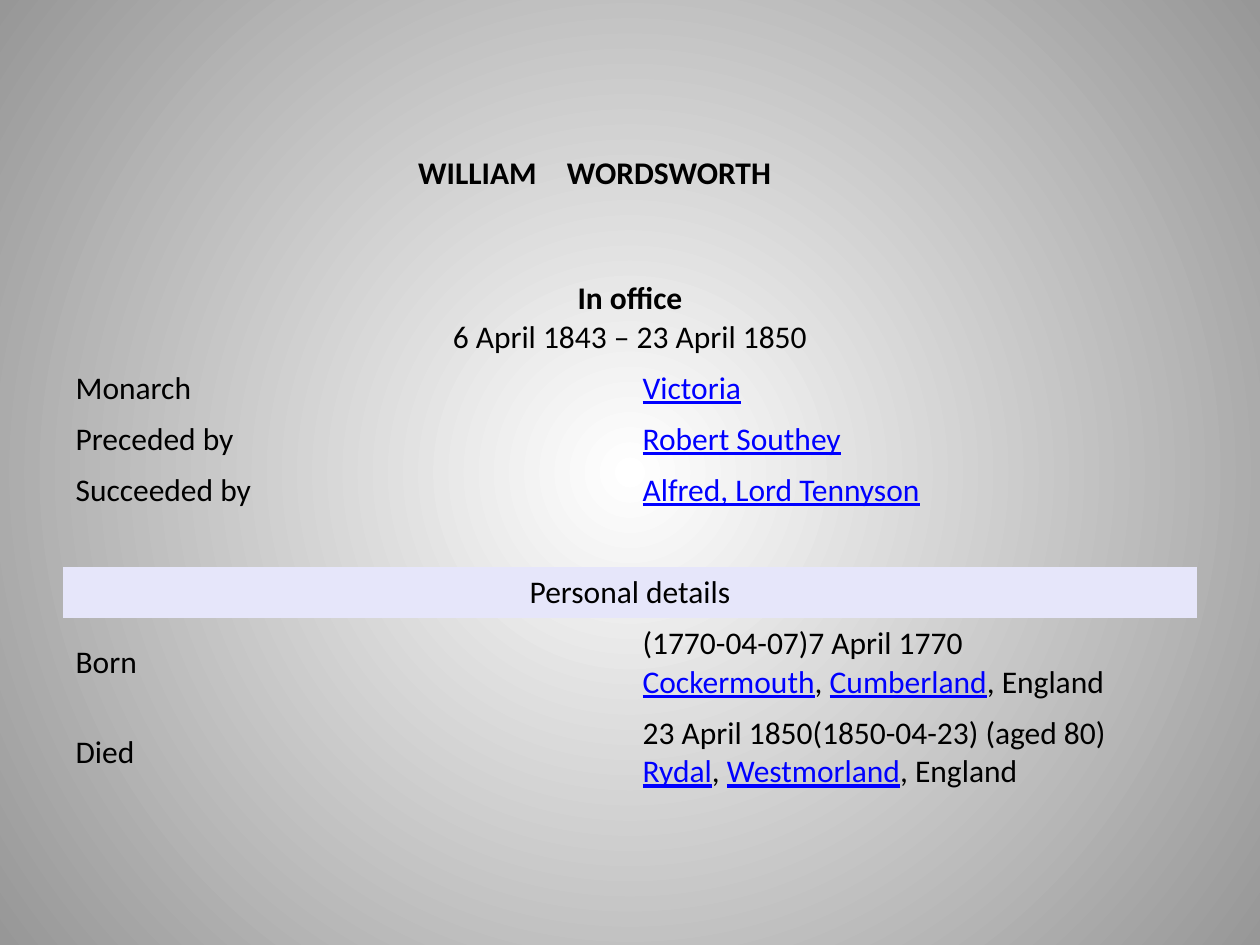
from dataclasses import dataclass
from typing import Optional

from lxml import etree
from pptx import Presentation
from pptx import util as u
from pptx.dml import color
from pptx.enum import text
from pptx.oxml import ns

COLOURS = {
    "text": "000000",
    "link": "0000FF",
    "band": "E6E6FA",
    "centre": "FFFFFF",
    "edge": "979797",
}
NO_GRID_STYLE = "{2D5ABB26-0587-4C30-8999-92F81FD0307C}"
LINE = 0.775
PADDING = 0.254


@dataclass
class Part:
    words: str
    bold: bool = False
    link: bool = False


@dataclass
class Row:
    label: list[Part]
    value: Optional[list[Part]] = None
    fill: Optional[str] = None
    lines: int = 1


def birth_or_death(label: str, date: str, town: str, county: str) -> Row:
    value = [Part(f"{date}\n"), Part(town, link=True), Part(", "),
             Part(county, link=True), Part(", England")]
    return Row([Part(label)], value, lines=2)


def office(label: str, person: str) -> Row:
    return Row([Part(label)], [Part(person, link=True)])


ROWS = [
    Row([Part("In office\n", bold=True), Part("6 April 1843\u00a0– 23 April 1850")], lines=2),
    office("Monarch", "Victoria"),
    office("Preceded by", "Robert Southey"),
    office("Succeeded by", "Alfred, Lord Tennyson"),
    Row([]),
    Row([Part("Personal details")], fill="band"),
    birth_or_death("Born", "(1770-04-07)7 April 1770", "Cockermouth", "Cumberland"),
    birth_or_death("Died", "23 April 1850(1850-04-23) (aged\u00a080)", "Rydal", "Westmorland"),
]


def rgb(name: str) -> color.RGBColor:
    return color.RGBColor.from_string(COLOURS[name])


def format_run(r, bold: bool = False, link: bool = False) -> None:
    r.font.name = "Calibri"
    r.font.size = u.Pt(18)
    r.font.bold = bold
    r.font.underline = link
    r.font.color.rgb = rgb("link" if link else "text")


def write_parts(p, parts: list[Part]) -> None:
    for part in parts:
        r = p.add_run()
        r.text = part.words.rstrip("\n")
        format_run(r, part.bold, part.link)
        if part.words.endswith("\n"):
            p.add_line_break()


def paint_background(s) -> None:
    fill = s.background.fill
    fill.gradient()
    for stop, name in zip(fill.gradient_stops, ("centre", "edge")):
        stop.color.rgb = rgb(name)
    lin = s.background._cSld.find(f".//{ns.qn('a:lin')}")
    radial = etree.Element(ns.qn("a:path"), {"path": "circle"})
    sides = {side: "50000" for side in "ltrb"}
    etree.SubElement(radial, ns.qn("a:fillToRect"), sides)
    lin.getparent().replace(lin, radial)


def add_title(s) -> None:
    sp = s.shapes.add_textbox(u.Cm(8.18), u.Cm(2.97), u.Cm(8.1), u.Cm(1.02))
    tf = sp.text_frame
    tf.word_wrap = True
    p = tf.paragraphs[0]
    tabs = etree.SubElement(p._p.get_or_add_pPr(), ns.qn("a:tabLst"))
    etree.SubElement(tabs, ns.qn("a:tab"), {"pos": str(u.Cm(3)), "algn": "l"})
    p.text = "WILLIAM\tWORDSWORTH"
    for r in p.runs:
        format_run(r, bold=True)


def add_details(s, rows: list[Row]) -> None:
    heights = [u.Cm(row.lines * LINE + PADDING) for row in rows]
    frame = s.shapes.add_table(len(rows), 2, u.Cm(1.27), u.Cm(5.51), u.Cm(22.86), sum(heights))
    table = frame.table
    table.first_row = table.horz_banding = False
    table._tbl.tblPr.find(ns.qn("a:tableStyleId")).text = NO_GRID_STYLE
    for i, (row, height) in enumerate(zip(rows, heights)):
        table.rows[i].height = height
        left, right = table.cell(i, 0), table.cell(i, 1)
        for cell, parts in ((left, row.label), (right, row.value or [])):
            cell.vertical_anchor = text.MSO_ANCHOR.MIDDLE
            if row.fill:
                cell.fill.solid()
                cell.fill.fore_color.rgb = rgb(row.fill)
            else:
                cell.fill.background()
            write_parts(cell.text_frame.paragraphs[0], parts)
        if row.value is None:
            left.merge(right)
            left.text_frame.paragraphs[0].alignment = text.PP_ALIGN.CENTER


def main() -> None:
    prs = Presentation()
    prs.slide_width, prs.slide_height = u.Cm(25.4), u.Cm(19.05)
    s = prs.slides.add_slide(prs.slide_layouts[6])
    paint_background(s)
    add_details(s, ROWS)
    add_title(s)
    prs.save("out.pptx")


if __name__ == "__main__":
    main()
